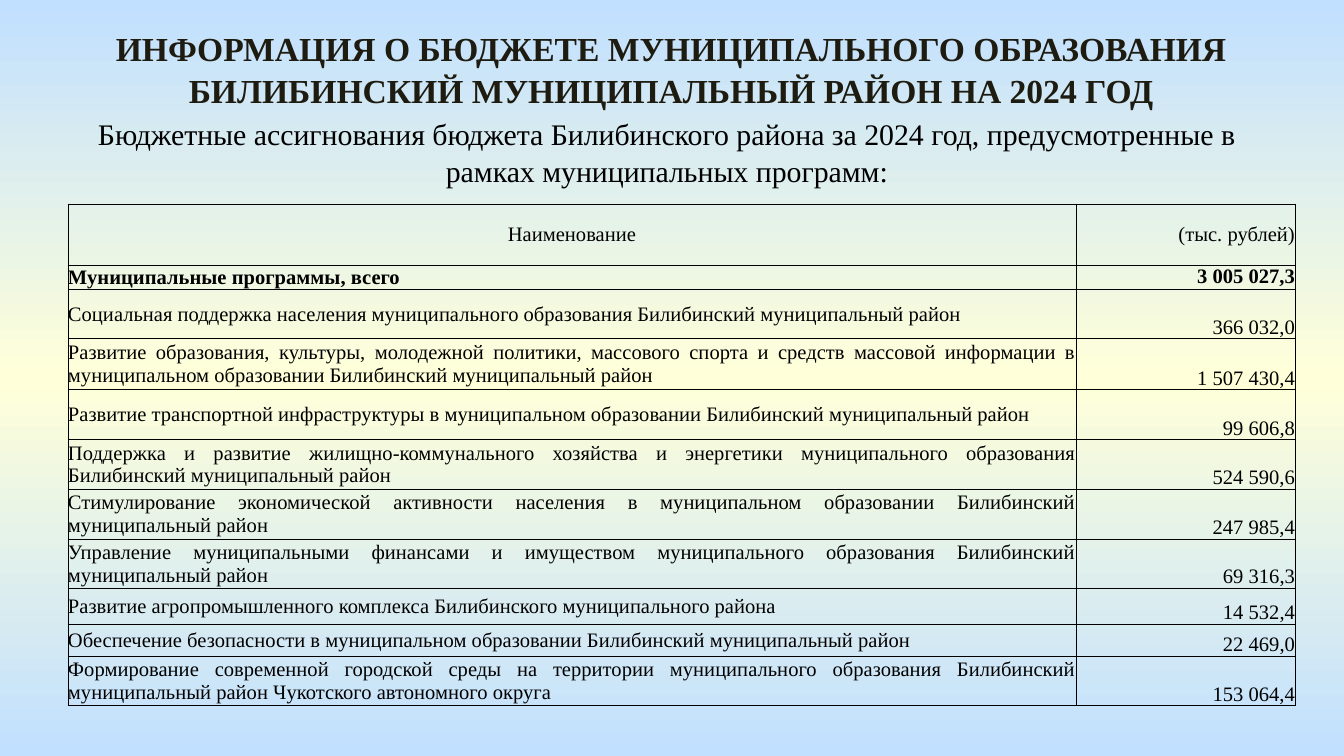
from copy import deepcopy

from lxml import etree
from pptx import Presentation
from pptx.dml.color import RGBColor
from pptx.enum.text import MSO_ANCHOR, MSO_AUTO_SIZE, PP_ALIGN
from pptx.oxml.ns import qn
from pptx.util import Emu, Pt

LEFT, CENTER, RIGHT, JUSTIFY = PP_ALIGN.LEFT, PP_ALIGN.CENTER, PP_ALIGN.RIGHT, PP_ALIGN.JUSTIFY
TOP, MIDDLE, BOTTOM = MSO_ANCHOR.TOP, MSO_ANCHOR.MIDDLE, MSO_ANCHOR.BOTTOM
GROW = MSO_AUTO_SIZE.SHAPE_TO_FIT_TEXT

SKY = RGBColor(0xC1, 0xE0, 0xFF)
CREAM = RGBColor(0xFF, 0xFF, 0xD9)
INK = RGBColor(0x1E, 0x1C, 0x11)
BLACK = RGBColor(0, 0, 0)

FONT = "Times New Roman"
EMU_PER_PX = 914400 / 134.4
BORDER_WIDTH = Pt(0.5)

TITLE = ("ИНФОРМАЦИЯ О БЮДЖЕТЕ МУНИЦИПАЛЬНОГО ОБРАЗОВАНИЯ "
         "БИЛИБИНСКИЙ МУНИЦИПАЛЬНЫЙ РАЙОН НА 2024 ГОД")
SUBTITLE = ("Бюджетные ассигнования бюджета Билибинского района за 2024 год, "
            "предусмотренные в рамках муниципальных программ:")
HEADER = ("Наименование", "(тыс. рублей)", 61)
TOTAL = ("Муниципальные программы, всего", "3 005 027,3", 25)
PROGRAMS = [
    ("Социальная поддержка населения муниципального образования Билибинский "
     "муниципальный район", "366 032,0", 49),
    ("Развитие образования, культуры, молодежной политики, массового спорта и средств "
     "массовой информации в муниципальном образовании Билибинский муниципальный район",
     "1 507 430,4", 51),
    ("Развитие транспортной инфраструктуры в муниципальном образовании Билибинский "
     "муниципальный район", "99 606,8", 50),
    ("Поддержка и развитие жилищно-коммунального хозяйства и энергетики муниципального "
     "образования Билибинский муниципальный район", "524 590,6", 48),
    ("Стимулирование экономической активности населения в муниципальном образовании "
     "Билибинский муниципальный район", "247 985,4", 50),
    ("Управление муниципальными финансами и имуществом муниципального образования "
     "Билибинский муниципальный район", "69 316,3", 49),
    ("Развитие агропромышленного комплекса Билибинского муниципального района",
     "14 532,4", 36),
    ("Обеспечение безопасности в муниципальном образовании Билибинский муниципальный "
     "район", "22 469,0", 32),
    ("Формирование современной городской среды на территории муниципального образования "
     "Билибинский муниципальный район Чукотского автономного округа", "153 064,4", 49),
]


def px(length):
    return Emu(round(length * EMU_PER_PX))


class SlideBuilder:
    def __init__(self, slide):
        self.slide = slide

    def background(self, stops):
        fill = self.slide.background.fill
        fill.gradient()
        fill.gradient_angle = 90
        stop_list = self.slide.element.find(".//" + qn("a:gsLst"))
        while len(stop_list) < len(stops):
            stop_list.append(deepcopy(stop_list[0]))
        for stop, (position, color) in zip(fill.gradient_stops, stops):
            stop.position = position
            stop.color.rgb = color

    def text(self, paragraph, text, size, alignment, color=BLACK, bold=False):
        paragraph.alignment = alignment
        run = paragraph.add_run()
        run.text = text
        run.font.name = FONT
        run.font.size = Pt(size)
        run.font.bold = bold
        run.font.color.rgb = color

    def placeholder(self, index, box, text, size, color=BLACK, bold=False):
        shape = self.slide.placeholders[index]
        shape.left, shape.top, shape.width, shape.height = map(px, box)
        frame = shape.text_frame
        frame.word_wrap = True
        frame.auto_size = GROW
        frame.vertical_anchor = TOP
        paragraph = frame.paragraphs[0]
        paragraph.space_before = Pt(0)
        paragraph.line_spacing = 1.05
        self.text(paragraph, text, size, CENTER, color, bold)

    def cell(self, cell, text, alignment, anchor, bold):
        cell.margin_left = cell.margin_right = cell.margin_top = cell.margin_bottom = 0
        cell.vertical_anchor = anchor
        self.text(cell.text_frame.paragraphs[0], text, 11, alignment, bold=bold)
        properties = cell._tc.get_or_add_tcPr()
        for side in ("a:lnL", "a:lnR", "a:lnT", "a:lnB"):
            line = etree.SubElement(properties, qn(side), w=str(int(BORDER_WIDTH)))
            solid = etree.SubElement(line, qn("a:solidFill"))
            etree.SubElement(solid, qn("a:srgbClr"), val=str(BLACK))
        cell.fill.background()

    def table(self, left, top, widths, rows):
        height = sum(row[2] for row in rows)
        shape = self.slide.shapes.add_table(
            len(rows), len(widths), px(left), px(top), px(sum(widths)), px(height))
        table = shape.table
        table.first_row = table.horz_banding = False
        for column, width in zip(table.columns, widths):
            column.width = px(width)
        for index, (name, amount, row_height) in enumerate(rows):
            table.rows[index].height = px(row_height)
            name_alignment = {0: CENTER, 1: LEFT}.get(index, JUSTIFY)
            amount_anchor = {0: MIDDLE, 1: TOP}.get(index, BOTTOM)
            bold = index == 1
            self.cell(table.cell(index, 0), name, name_alignment, MIDDLE, bold)
            self.cell(table.cell(index, 1), amount, RIGHT, amount_anchor, bold)


def main():
    presentation = Presentation()
    presentation.slide_width, presentation.slide_height = px(1344), px(756)
    builder = SlideBuilder(presentation.slides.add_slide(presentation.slide_layouts[0]))
    builder.background([(0, SKY), (0.5, CREAM), (1, SKY)])
    builder.placeholder(0, (47, 19, 1249, 95), TITLE, 18, INK, bold=True)
    builder.placeholder(1, (42, 107, 1250, 86), SUBTITLE, 16)
    builder.table(68, 204, (1008, 219), [HEADER, TOTAL, *PROGRAMS])
    presentation.save("out.pptx")


if __name__ == "__main__":
    main()
